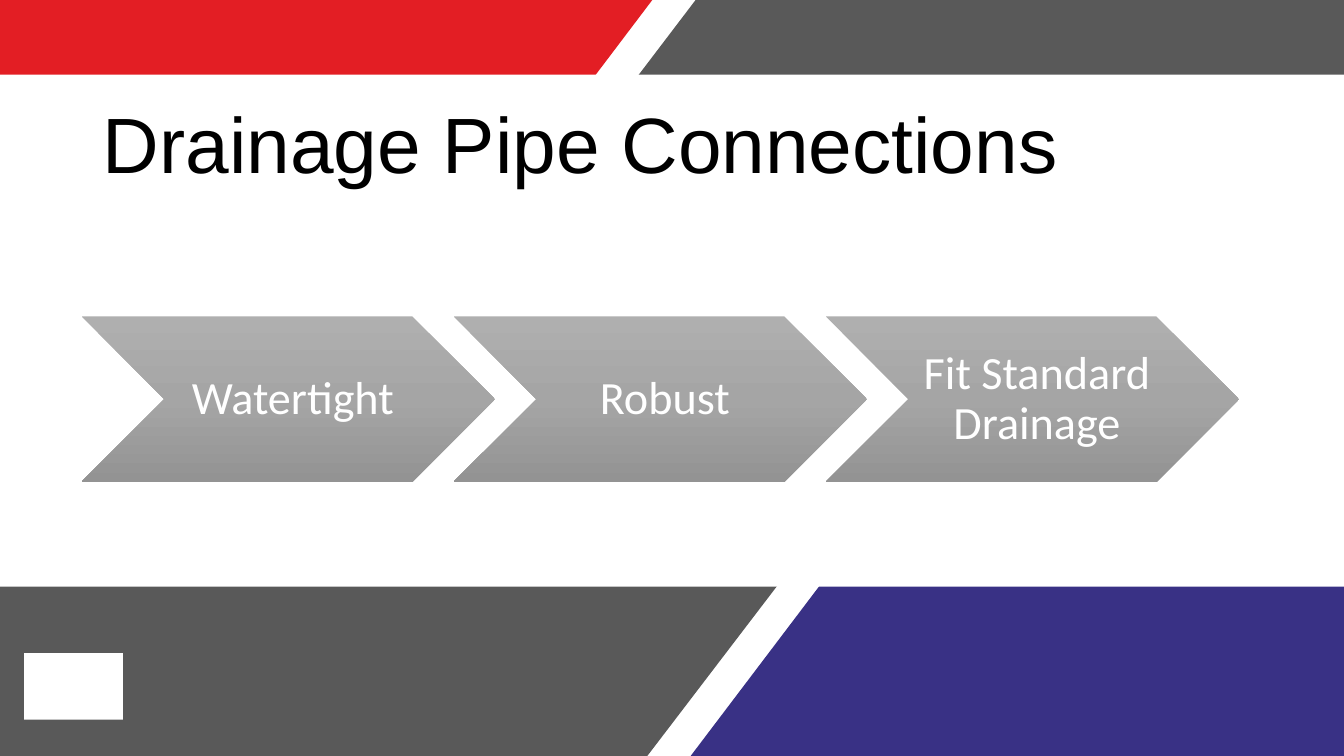
from copy import deepcopy
from dataclasses import dataclass

from pptx import Presentation
from pptx.dml.color import RGBColor
from pptx.enum import shapes, text
from pptx.oxml.ns import qn
from pptx import util as u

EMU_PER_PX = 9144
SLIDE_WIDTH, SLIDE_HEIGHT = 1333, 750


@dataclass(frozen=True)
class Theme:
    red: str = "E31E24"
    blue: str = "393185"
    grey: str = "595959"
    white: str = "FFFFFF"
    black: str = "000000"
    chevron_stops: tuple = ("AFAFAF", "A5A5A5", "939393")
    title_font: str = "Arial"
    label_font: str = "Calibri"
    title_size: int = 56
    label_size: int = 33


THEME = Theme()


def px(length):
    return u.Emu(length * EMU_PER_PX)


def color(value):
    return RGBColor.from_string(value)


def fill_plain(shape, fill):
    shape.shadow.inherit = False
    shape.fill.solid()
    shape.fill.fore_color.rgb = color(fill)
    shape.line.fill.background()


def add_rectangle(slide, left, top, width, height, fill):
    shape = slide.shapes.add_shape(
        shapes.MSO_SHAPE.RECTANGLE, px(left), px(top), px(width), px(height))
    fill_plain(shape, fill)


def add_band(slide, points, fill):
    builder = slide.shapes.build_freeform(*points[0], scale=EMU_PER_PX)
    builder.add_line_segments(points[1:], close=True)
    fill_plain(builder.convert_to_shape(), fill)


def format_paragraph(paragraph, alignment, font, size, fill):
    paragraph.alignment = alignment
    paragraph.line_spacing = 0.9
    paragraph.font.name = font
    paragraph.font.size = u.Pt(size)
    paragraph.font.color.rgb = color(fill)


def add_title(slide, wording, left, top, width, height):
    title = slide.shapes.title
    title.left, title.top = px(left), px(top)
    title.width, title.height = px(width), px(height)
    frame = title.text_frame
    frame.text = wording
    frame.word_wrap = True
    frame.auto_size = text.MSO_AUTO_SIZE.NONE
    frame.vertical_anchor = text.MSO_ANCHOR.MIDDLE
    format_paragraph(frame.paragraphs[0], text.PP_ALIGN.LEFT,
                     THEME.title_font, THEME.title_size, THEME.black)
    slide.shapes.element.append(title.element)


def fill_gradient(shape, colors):
    shape.fill.gradient()
    shape.fill.gradient_angle = 270
    first_stop = shape.element.spPr.find(qn("a:gradFill")).find(qn("a:gsLst"))[0]
    first_stop.addnext(deepcopy(first_stop))
    stops = shape.fill.gradient_stops
    for index, (stop, value) in enumerate(zip(stops, colors)):
        stop.color.rgb = color(value)
        stop.position = index / (len(colors) - 1)


def add_chevron(slide, label, left, top, width, height):
    shape = slide.shapes.add_shape(
        shapes.MSO_SHAPE.CHEVRON, px(left), px(top), px(width), px(height))
    shape.shadow.inherit = False
    shape.line.fill.background()
    fill_gradient(shape, THEME.chevron_stops)
    frame = shape.text_frame
    frame.text = label
    frame.word_wrap = True
    frame.vertical_anchor = text.MSO_ANCHOR.MIDDLE
    frame.margin_left = px(14)
    frame.margin_top = frame.margin_right = frame.margin_bottom = px(5)
    format_paragraph(frame.paragraphs[0], text.PP_ALIGN.CENTER,
                     THEME.label_font, THEME.label_size, THEME.white)


def add_background(slide):
    right, bottom = SLIDE_WIDTH, SLIDE_HEIGHT
    add_band(slide, [(0, 0), (647, 0), (448, 263), (0, 263)], THEME.red)
    add_band(slide, [(right, bottom), (685, bottom), (885, 486), (right, 486)], THEME.blue)
    add_band(slide, [(0, 488), (842, 488), (642, bottom), (0, bottom)], THEME.grey)
    add_band(slide, [(right, 263), (490, 263), (690, 0), (right, 0)], THEME.grey)
    add_rectangle(slide, 24, 648, 98, 66, THEME.white)
    add_rectangle(slide, 0, 74, SLIDE_WIDTH, 508, THEME.white)


def main():
    presentation = Presentation()
    presentation.slide_width = px(SLIDE_WIDTH)
    presentation.slide_height = px(SLIDE_HEIGHT)
    slide = presentation.slides.add_slide(presentation.slide_layouts[5])
    add_background(slide)
    add_title(slide, "Drainage Pipe Connections", 92, 74, 1150, 145)
    for index, label in enumerate(("Watertight", "Robust", "Fit Standard Drainage")):
        add_chevron(slide, label, 81 + index * 369, 314, 410, 164)
    presentation.save("out.pptx")


if __name__ == "__main__":
    main()
